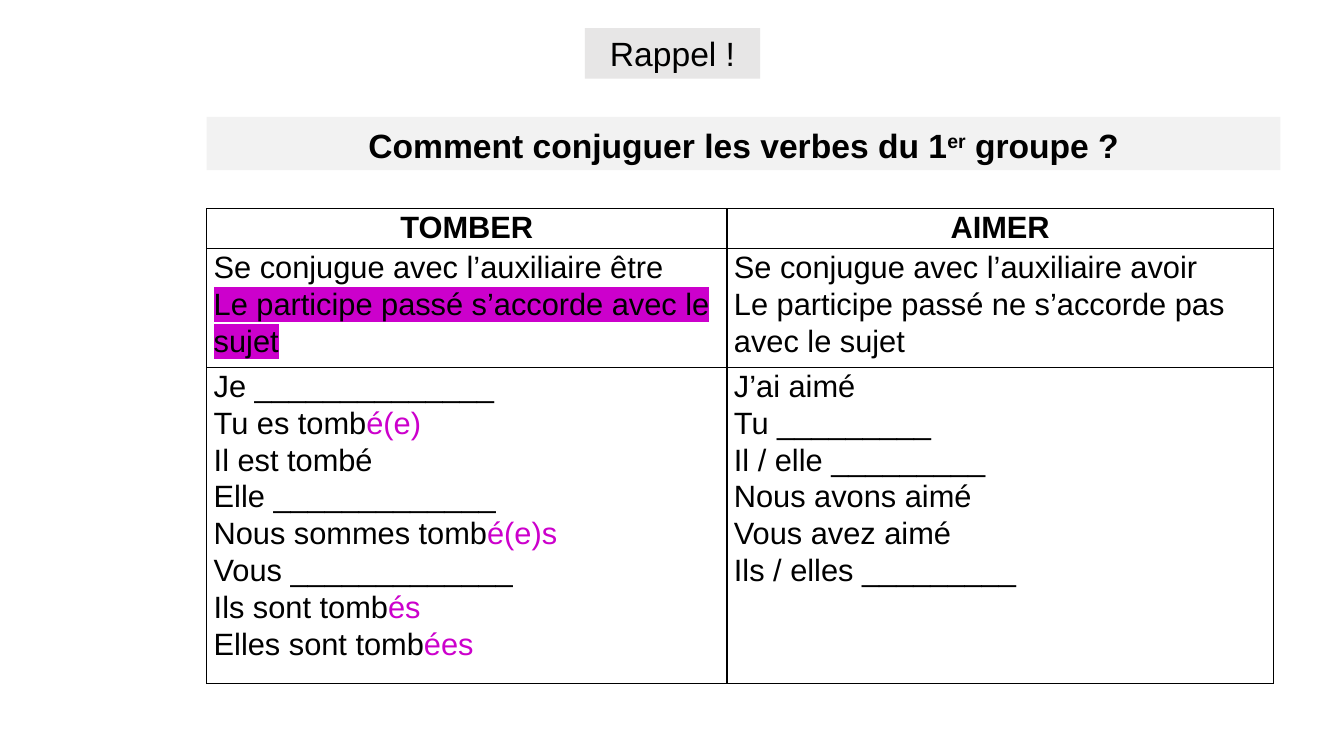
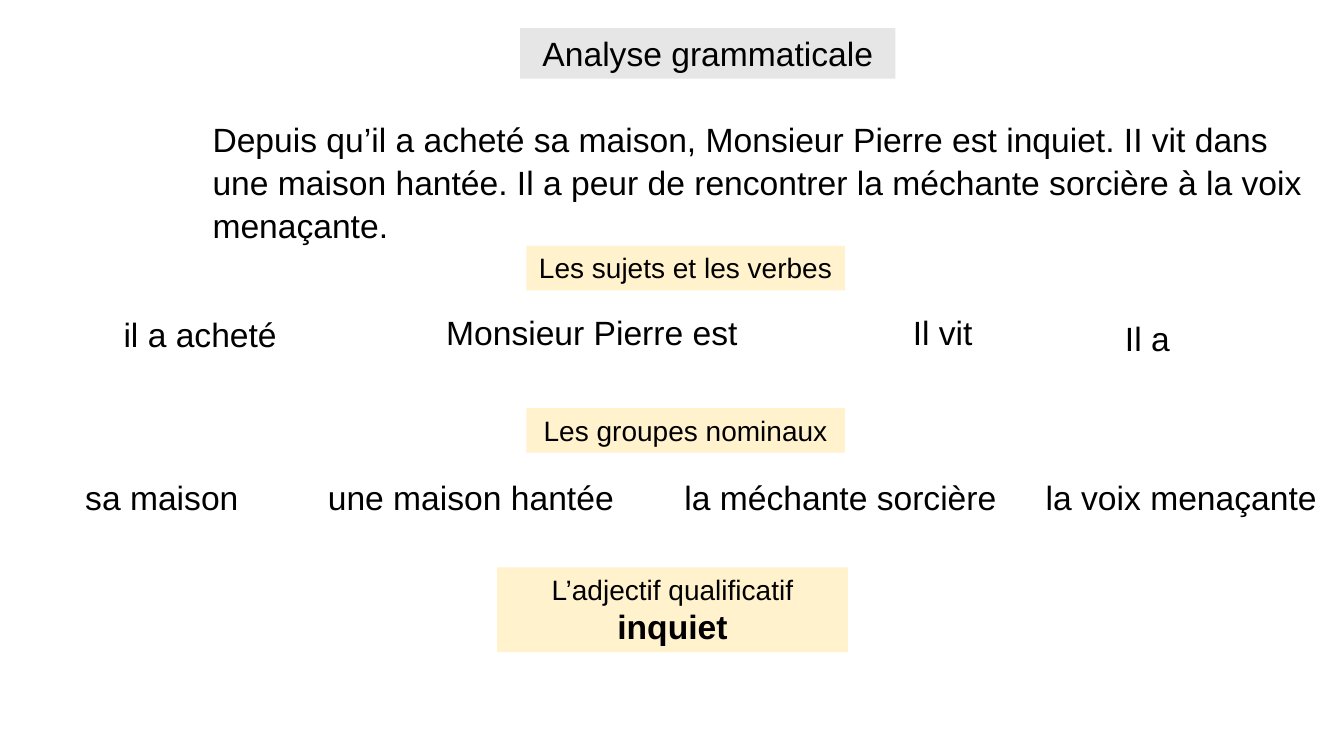
import pptx
import pptx.util
import pptx.dml.color
import pptx.enum.shapes
import pptx.enum.text
import pptx.oxml
import pptx.oxml.ns
import lxml.etree

PX = 9144
INK, PINK, GREY, PALE, CREAM = "000000", "CC00CC", "E7E6E6", "F2F2F2", "FFF2CC"
FONT = "Arial"
MID = pptx.enum.text.PP_ALIGN.CENTER
LEFT = pptx.enum.text.PP_ALIGN.LEFT
FIT = pptx.enum.text.MSO_AUTO_SIZE
rgb = pptx.dml.color.RGBColor.from_string
qn = pptx.oxml.ns.qn


def write(frame, text, size=24, align=MID, bold=False, space=1.0, after=0):
    frame.word_wrap = True
    frame.vertical_anchor = pptx.enum.text.MSO_ANCHOR.TOP
    for n, line in enumerate(text.split("\n")):
        par = frame.add_paragraph() if n else frame.paragraphs[0]
        par.alignment, par.line_spacing = align, space
        par.space_before, par.space_after = 0, pptx.util.Pt(after)
        for part in line.split("|"):
            run = par.add_run()
            run.text = part
            run.font.size = pptx.util.Pt(size)
            run.font.bold = bold
            run.font.color.rgb = rgb(INK)
            run.font.name = FONT


def place(page, box, text, fill=None, title=False, **style):
    area = [v * PX for v in box]
    if title:
        shape = page.shapes.title
        shape.left, shape.top, shape.width, shape.height = area
    elif fill:
        shape = page.shapes.add_shape(pptx.enum.shapes.MSO_SHAPE.RECTANGLE, *area)
        shape.shadow.inherit = False
        shape.line.fill.background()
    else:
        shape = page.shapes.add_textbox(*area)
    if fill:
        shape.fill.solid()
        shape.fill.fore_color.rgb = rgb(fill)
    write(shape.text_frame, text, **style)
    shape.text_frame.auto_size = FIT.NONE if title else FIT.SHAPE_TO_FIT_TEXT
    return shape.text_frame.paragraphs[0].runs


deck = pptx.Presentation()
deck.slide_width, deck.slide_height = 1333 * PX, 750 * PX
pages = []
for text, left, width in [("Rappel !", 580, 174), ("Analyse grammaticale", 516, 372)]:
    page = deck.slides.add_slide(deck.slide_layouts[5])
    place(page, (left, 28, width, 50), text, GREY, title=True)
    pages.append(page)
recall, study = pages

runs = place(recall, (205, 116, 1065, 53), "Comment conjuguer les verbes du 1|er| groupe ?",
             PALE, bold=True, space=1.07, after=8)
runs[1].font._element.set("baseline", "30000")

rows = [
    ("TOMBER", "AIMER"),
    ("Se conjugue avec l’auxiliaire être\nLe participe passé s’accorde avec le sujet",
     "Se conjugue avec l’auxiliaire avoir\nLe participe passé ne s’accorde pas avec le sujet"),
    ("Je ______________\nTu es tomb|é(e)\nIl est tombé\nElle _____________\n"
     "Nous sommes tomb|é(e)s\nVous _____________\nIls sont tomb|és\nElles sont tomb|ées",
     "J’ai aimé\nTu _________\nIl / elle _________\nNous avons aimé\n"
     "Vous avez aimé\nIls / elles _________"),
]
grid = recall.shapes.add_table(3, 2, 205 * PX, 207 * PX, 1058 * PX, 471 * PX).table
grid.first_row = grid.horz_banding = False
for col, width in zip(grid.columns, (516, 542)):
    col.width = width * PX
for row, height in zip(grid.rows, (39, 118, 314)):
    row.height = height * PX

for r, row in enumerate(rows):
    for c, text in enumerate(row):
        cell = grid.cell(r, c)
        cell.margin_left = cell.margin_right = 7 * PX
        cell.margin_top = cell.margin_bottom = 0
        write(cell.text_frame, text, 22, LEFT if r else MID, r == 0, 1.07)
        for par in cell.text_frame.paragraphs:
            for run in par.runs[1:]:
                run.font.color.rgb = rgb(PINK)
        cell.fill.background()
        props = cell._tc.get_or_add_tcPr()
        for n, side in enumerate(("lnL", "lnR", "lnT", "lnB")):
            line = pptx.oxml.parse_xml(
                f'<a:{side} {pptx.oxml.ns.nsdecls("a")} w="12700"><a:solidFill>'
                f'<a:srgbClr val="{INK}"/></a:solidFill></a:{side}>')
            props.insert(n, line)

font = grid.cell(1, 0).text_frame.paragraphs[1].runs[0].font._element
mark = lxml.etree.Element(qn("a:highlight"))
lxml.etree.SubElement(mark, qn("a:srgbClr")).set("val", PINK)
font.find(qn("a:latin")).addprevious(mark)

place(study, (201, 110, 1116, 140),
      "Depuis qu’il a acheté sa maison, Monsieur Pierre est inquiet. II vit dans une maison "
      "hantée. Il a peur de rencontrer la méchante sorcière à la voix menaçante.",
      align=LEFT, space=1.07, after=8)
for top, text in [(244, "Les sujets et les verbes"), (405, "Les groupes nominaux")]:
    place(study, (522, top, 316, 44), text, CREAM, size=20)

for left, top, width, text in [
    (93, 307, 211, "il a acheté"),
    (406, 305, 362, "Monsieur Pierre est"),
    (888, 305, 94, "Il vit"),
    (1091, 310, 94, "Il a"),
    (68, 468, 185, "sa maison"),
    (304, 468, 326, "une maison hantée"),
    (657, 468, 353, "la méchante sorcière"),
    (1010, 468, 323, "la voix menaçante"),
]:
    place(study, (left, top, width, 50), text)

runs = place(study, (493, 563, 348, 84), "L’adjectif qualificatif |inquiet", CREAM, size=20)
runs[1].font.size = pptx.util.Pt(24)
runs[1].font.bold = True

deck.save("out.pptx")
